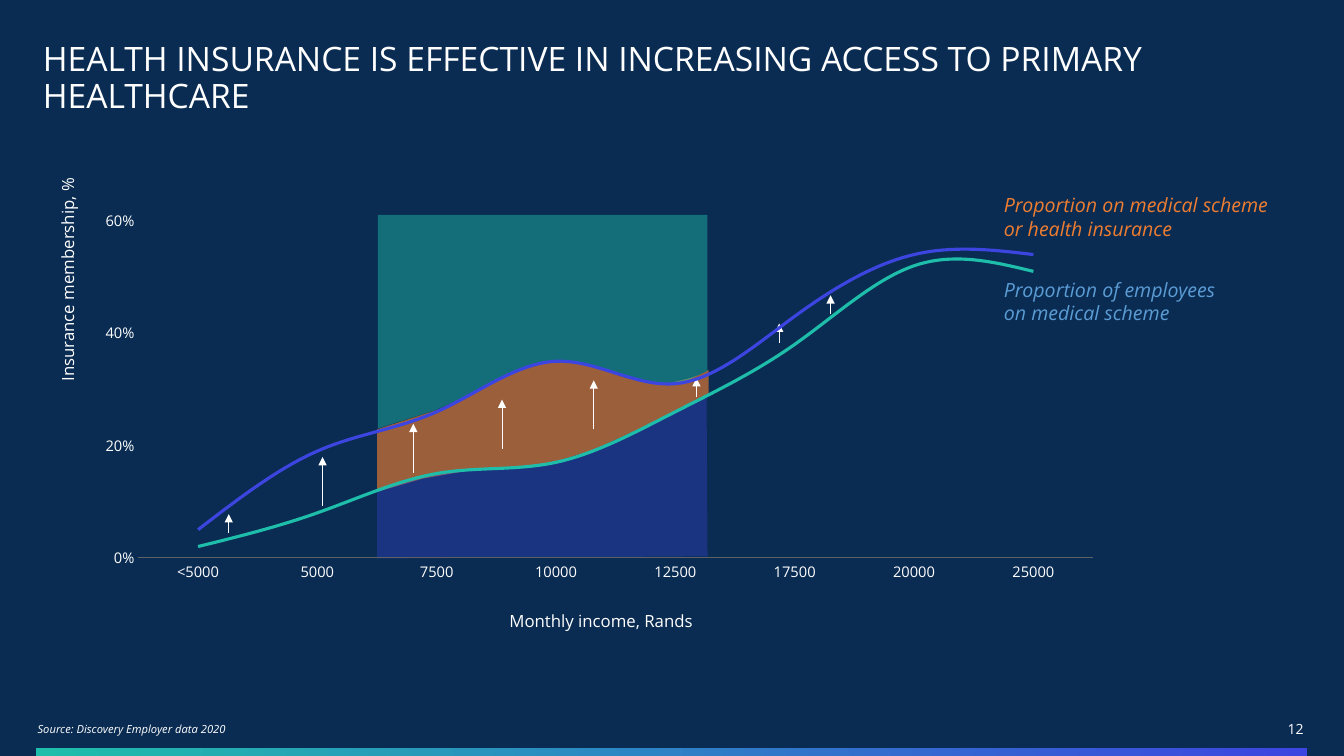
from lxml import etree
from pptx import Presentation
from pptx.chart.data import CategoryChartData
from pptx.dml.color import RGBColor
from pptx.enum import chart as charts, shapes, text
from pptx.oxml import parse_xml
from pptx.oxml import ns
from pptx.util import Pt

COLORS = {
    "background": "0A2C52", "white": "FFFFFF", "teal": "1EBEAA", "indigo": "3D45E0",
    "orange": "ED7D31", "scheme": "5B9CD5", "insured": "EE7D31", "axis": "5C6163",
    "chart": "292B2C",
}
FONT = "Open Sans"

INSURED_GAP = [
    (269.3, 351.4), (269.3, 306.7), (313.9, 292.3), (370.1, 264.2),
    (380.9, 261.4, 390.2, 259.2, 400.3, 257), (416.9, 259.2, 430.6, 264.2, 445, 269.3),
    (454.3, 272.2, 464.4, 272.9, 474.5, 275), (484.6, 271.4, 496.8, 270.7, 506.2, 264.2),
    (506.2, 282.2), (478.8, 295.9), (423.4, 321.8),
    (409, 325.4, 401, 329.8, 380.2, 333.4), (338.4, 335.5), (301.7, 342),
]
UNINSURED = [
    (270, 306), (270, 153.4), (505.4, 153.4), (505.4, 265),
    (498.2, 267.8, 492.5, 272.2, 483.1, 274.3), (473.8, 275, 468, 275, 455.8, 272.2),
    (439.9, 267.1, 424.1, 262.1, 407.5, 257.8), (390.2, 257, 374.4, 263.5, 357.8, 270.7),
    (342, 277.9, 329, 285.1, 311, 293),
]
ON_SCHEME = [
    (269.3, 349.9), (269.3, 398.9), (505.4, 397.4), (504.7, 282.2),
    (475.2, 297.4, 450, 311, 414.7, 324.7), (387.4, 331.9, 377.3, 334.8, 326.2, 337),
    (307.4, 339.1, 288.7, 345.6, 269.3, 349.9),
]
LONG, SHORT = 35, 13.7
ARROWS = [
    (163.4, 380.9, SHORT), (230.4, 361.4, LONG), (295.2, 337.7, LONG), (358.6, 320.4, LONG),
    (424.1, 306.7, LONG), (497.5, 283.7, SHORT), (556.6, 244.8, SHORT), (593.3, 224.6, SHORT),
]
INCOMES = ["<5000", "5000", "7500", "10000", "12500", "17500", "20000", "25000"]
SERIES = [
    ("Series 1", "teal", [0.02, 0.08, 0.15, 0.17, 0.26, 0.38, 0.52, 0.51]),
    ("Series 2", "indigo", [0.05, 0.19, 0.26, 0.35, 0.31, 0.43, 0.54, 0.54]),
]


def rgb(name):
    """Return the named colour."""
    return RGBColor.from_string(COLORS[name])


def set_font(font, size, color="white", italic=False):
    """Apply the font, size and colour of one kind of text."""
    formats = {"name": FONT, "size": Pt(size), "italic": italic}
    for attribute, value in formats.items():
        setattr(font, attribute, value)
    font.color.rgb = rgb(color)


def add_text(slide, box, words, size, color="white", italic=False, align="LEFT",
             anchor="TOP", margins=(0, 0, 0, 0), rotation=0, spacing=None):
    """Add a wrapped text box with one paragraph."""
    shape = slide.shapes.add_textbox(*map(Pt, box))
    shape.rotation = rotation
    left, top, right, bottom = map(Pt, margins)
    formats = {
        "word_wrap": True, "vertical_anchor": getattr(text.MSO_ANCHOR, anchor),
        "margin_left": left, "margin_top": top, "margin_right": right, "margin_bottom": bottom,
    }
    for attribute, value in formats.items():
        setattr(shape.text_frame, attribute, value)
    paragraph = shape.text_frame.paragraphs[0]
    paragraph.text = words
    paragraph.alignment = getattr(text.PP_ALIGN, align)
    paragraph.line_spacing = spacing
    set_font(paragraph.font, size, color, italic)


def bend_curves(shape, outline):
    """Turn the segments that have control points into cubic curves."""
    segments = list(shape._element.iter(ns.qn("a:lnTo")))
    for segment, step in zip(segments, outline[1:]):
        if len(step) == 2:
            continue
        segment.tag = ns.qn("a:cubicBezTo")
        for index in (0, 1):
            x, y = step[2 * index:2 * index + 2]
            control = etree.Element(
                ns.qn("a:pt"), x=str(Pt(x) - shape.left), y=str(Pt(y) - shape.top))
            segment.insert(index, control)


def add_area(slide, outline, color, opacity):
    """Add a closed, see-through area."""
    corners = [(Pt(step[-2]), Pt(step[-1])) for step in outline]
    builder = slide.shapes.build_freeform(*corners[0])
    builder.add_line_segments(corners[1:], close=True)
    shape = builder.convert_to_shape()
    bend_curves(shape, outline)
    shape.shadow.inherit = False
    shape.fill.solid()
    shape.fill.fore_color.rgb = rgb(color)
    shape.line.fill.background()
    fill_color = shape._element.spPr.find(".//" + ns.qn("a:srgbClr"))
    etree.SubElement(fill_color, ns.qn("a:alpha"), val=str(opacity * 1000))


def add_arrow(slide, x, bottom, length):
    """Add a thin arrow that points up."""
    arrow = slide.shapes.add_connector(
        shapes.MSO_CONNECTOR.STRAIGHT, Pt(x), Pt(bottom), Pt(x), Pt(bottom - length))
    arrow.line.color.rgb = rgb("white")
    arrow.line.width = Pt(0.5)
    etree.SubElement(arrow.line._get_or_add_ln(), ns.qn("a:tailEnd"), type="triangle")
    etree.SubElement(arrow._element.spPr, ns.qn("a:effectLst"))


def add_footer_bar(slide):
    """Add the gradient bar along the bottom edge."""
    bar = slide.shapes.add_shape(
        shapes.MSO_SHAPE.RECTANGLE, Pt(25.5), Pt(534.6), Pt(908.4), Pt(5.4))
    bar.shadow.inherit = False
    bar.line.fill.background()
    bar.fill.gradient()
    bar.fill.gradient_angle = 0
    for stop, position, color in zip(bar.fill.gradient_stops, (0, 1), ("teal", "indigo")):
        stop.position = position
        stop.color.rgb = rgb(color)


def place_plot(chart, x, y, width, height):
    """Fix the inner plot area as fractions of the chart."""
    plot_area = chart._chartSpace.chart.plotArea
    for layout in plot_area.findall(ns.qn("c:layout")):
        plot_area.remove(layout)
    settings = {"layoutTarget": "inner", "xMode": "edge", "yMode": "edge",
                "x": x, "y": y, "w": width, "h": height}
    parts = "".join(f'<c:{tag} val="{value}"/>' for tag, value in settings.items())
    plot_area.insert(0, parse_xml(
        f'<c:layout {ns.nsdecls("c")}><c:manualLayout>{parts}</c:manualLayout></c:layout>'))


def add_membership_chart(slide, box):
    """Add the smooth line chart of membership by income."""
    data = CategoryChartData(number_format="0%")
    data.categories = INCOMES
    for name, _, values in SERIES:
        data.add_series(name, values)
    chart = slide.shapes.add_chart(charts.XL_CHART_TYPE.LINE, *map(Pt, box), data).chart
    chart.has_title = False
    chart.has_legend = False
    set_font(chart.font, 10, "chart")
    place_plot(chart, 0.045, 0.036, 0.938, 0.796)
    for axis in (chart.category_axis, chart.value_axis):
        formats = {"has_major_gridlines": False, "major_tick_mark": charts.XL_TICK_MARK.NONE,
                   "minor_tick_mark": charts.XL_TICK_MARK.NONE}
        for attribute, value in formats.items():
            setattr(axis, attribute, value)
        set_font(axis.tick_labels.font, 10.5)
    chart.category_axis.format.line.color.rgb = rgb("axis")
    chart.category_axis.format.line.width = Pt(0.75)
    scale = {"minimum_scale": 0, "maximum_scale": 0.6, "major_unit": 0.2}
    for attribute, value in scale.items():
        setattr(chart.value_axis, attribute, value)
    chart.value_axis.format.line.fill.background()
    chart.value_axis.tick_labels.number_format = "0%"
    chart.value_axis.tick_labels.number_format_is_linked = False
    chart.plots[0].vary_by_categories = False
    for series, (_, color, _) in zip(chart.plots[0].series, SERIES):
        series.smooth = True
        series.marker.style = charts.XL_MARKER_STYLE.NONE
        series.format.line.color.rgb = rgb(color)
        series.format.line.width = Pt(2.25)


def main():
    """Build and save the slide."""
    presentation = Presentation()
    presentation.slide_width, presentation.slide_height = Pt(960), Pt(540)
    slide = presentation.slides.add_slide(presentation.slide_layouts[6])
    slide.background.fill.solid()
    slide.background.fill.fore_color.rgb = rgb("background")
    add_text(slide, (908.8, 514.8, 22.4, 12.2), "12", 10, align="RIGHT")
    add_footer_bar(slide)
    add_area(slide, INSURED_GAP, "orange", 64)
    add_area(slide, UNINSURED, "teal", 46)
    add_area(slide, ON_SCHEME, "indigo", 34)
    add_text(slide, (30.6, 30.6, 899.3, 26.6),
             "HEALTH INSURANCE IS EFFECTIVE IN INCREASING ACCESS TO PRIMARY HEALTHCARE",
             24, spacing=0.9)
    add_text(slide, (-33.1, 190.8, 162.7, 35.3), "Insurance membership, %", 12,
             align="RIGHT", anchor="MIDDLE", rotation=270)
    add_text(slide, (26.9, 501.8, 141.8, 26.6), "Source: Discovery Employer data 2020", 8,
             italic=True, anchor="BOTTOM", margins=(0, 0, 2.9, 2.9))
    for x, bottom, length in ARROWS:
        add_arrow(slide, x, bottom, length)
    labels = [
        (186.9, 176, "Proportion of employees on medical scheme", "scheme"),
        (126.7, 199.4, "Proportion on medical scheme or health insurance", "insured"),
    ]
    for top, width, words, color in labels:
        add_text(slide, (714.2, top, width, 56.2), words, 14, color, italic=True,
                 anchor="MIDDLE", margins=(2.9,) * 4)
    add_membership_chart(slide, (66.2, 146.9, 727, 302.4))
    add_text(slide, (66.2, 425.9, 726.5, 35.3), "Monthly income, Rands", 12,
             align="CENTER", anchor="MIDDLE")
    presentation.save("out.pptx")


if __name__ == "__main__":
    main()
